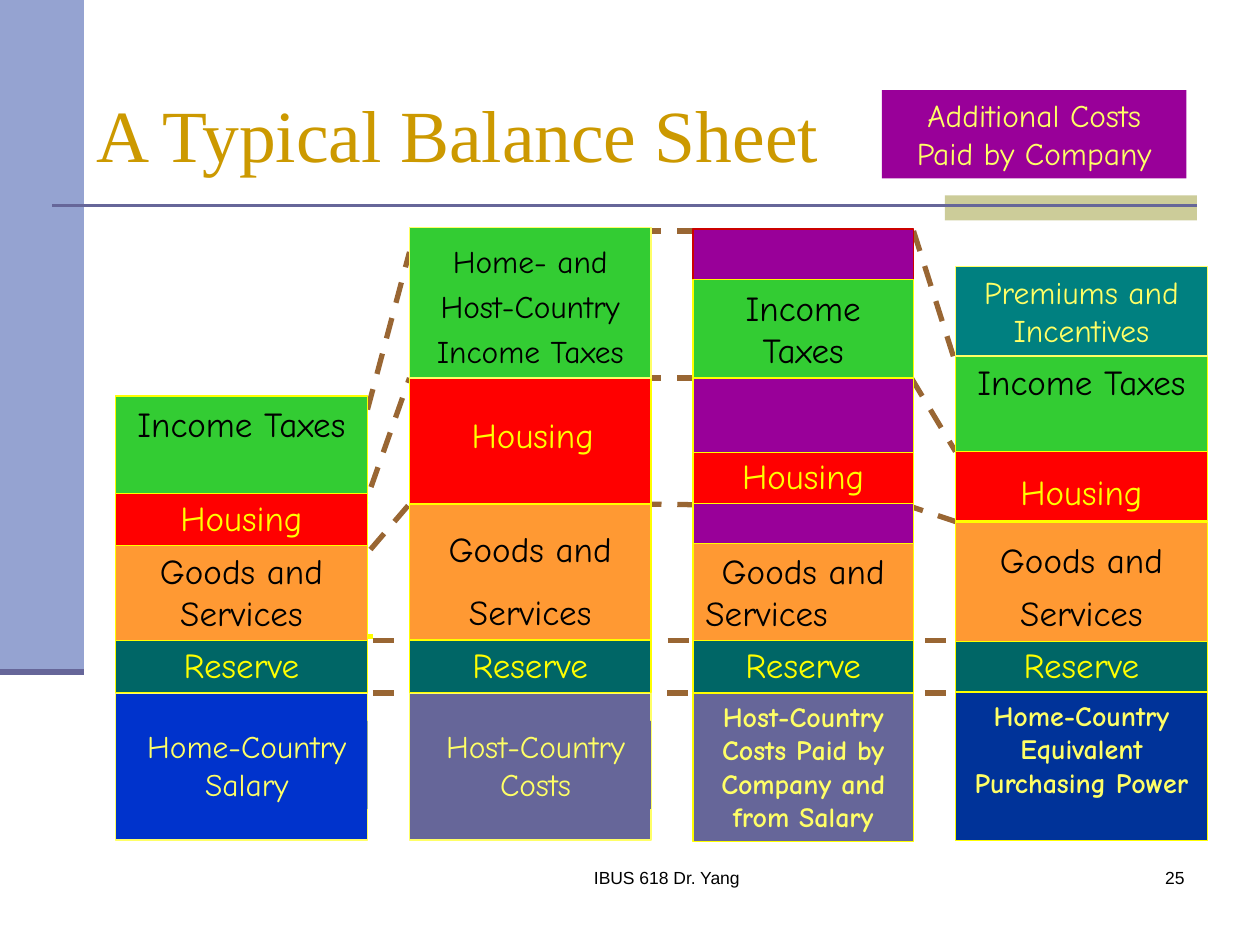
from lxml.etree import SubElement
from pptx import Presentation
from pptx.dml.color import RGBColor
from pptx.enum.dml import MSO_LINE
from pptx.enum.shapes import MSO_CONNECTOR, MSO_SHAPE
from pptx.enum.text import MSO_ANCHOR, MSO_AUTO_SIZE, PP_ALIGN
from pptx.oxml.ns import qn
from pptx.util import Inches, Pt

CELL = Inches(1) / 12  # the slide is a grid of 120 columns by 90 rows

COLORS = {
    "periwinkle": "95A3D1", "khaki": "CCCC99", "slate": "666699",
    "gold": "CC9900", "brown": "996633", "purple": "990099",
    "green": "33CC33", "red": "FF0000", "crimson": "CC0000",
    "orange": "FF9933", "pine": "006666", "teal": "008080",
    "blue": "0033CC", "navy": "003399", "yellow": "FFFF00",
    "lemon": "FFFF66", "black": "000000",
}

# kind of band: fill, outline, text colour, text size, bold
BANDS = {
    "taxes": ("green", "yellow", "black", 20, False),
    "all taxes": ("green", "lemon", "black", 18, False),
    "housing": ("red", "yellow", "yellow", 20, False),
    "housing label": ("red", None, "yellow", 20, False),
    "goods": ("orange", "yellow", "black", 20, False),
    "reserve": ("pine", "yellow", "yellow", 20, False),
    "premiums": ("teal", "lemon", "lemon", 18, False),
    "company": ("purple", "yellow", "lemon", 18, False),
    "company top": ("purple", "crimson", "lemon", 18, False),
    "legend": ("purple", None, "lemon", 18, False),
    "salary": ("blue", "lemon", "lemon", 18, False),
    "salary label": ("blue", None, "lemon", 18, False),
    "host costs": ("slate", "lemon", "lemon", 18, False),
    "host label": ("slate", None, "lemon", 18, False),
    "shared costs": ("slate", "yellow", "lemon", 16, True),
    "purchasing power": ("navy", "yellow", "lemon", 16, True),
}

CHART = (11, 22)  # left column and top row of the balance sheet
RESERVE = ("reserve", 38.7, 5.25, "Reserve")

# (left, width) and bands from back to front: kind, top, height, text, line spacing
COLUMNS = [
    ((0, 24), [
        ("salary", 44, 14),
        RESERVE,
        ("goods", 29.7, 9.3, "Goods and Services"),
        ("housing", 24.7, 5.25, "Housing"),
        ("taxes", 15.7, 9.3, "Income Taxes"),
    ]),
    ((28, 23), [
        ("host costs", 44, 14),
        RESERVE,
        ("goods", 25.65, 13.3, "Goods and Services", 1.5),
        ("housing", 13.9, 12.1),
        ("all taxes", -0.3, 14.3, "Home- and Host-Country Income Taxes", 1.2),
    ]),
    ((55, 21), [
        RESERVE,
        ("goods", 29.7, 9.3, "Goods and\nServices"),
        ("company", 24.55, 5.25),
        ("housing", 20.7, 5.25, "Housing"),
        ("company", 14, 7.1),
        ("company top", -0.2, 6.1),
        ("shared costs", 44, 14.15,
         "Host-Country Costs Paid by Company and from Salary"),
        ("taxes", 4.65, 9.3, "Income Taxes"),
    ]),
    ((80, 24), [
        RESERVE,
        ("goods", 27.7, 11.4, "Goods and Services", 1.25),
        ("housing", 21, 6.6, "Housing", 1.3),
        ("taxes", 11.7, 9.3, "Income Taxes"),
        ("premiums", 3.4, 8.5, "Premiums and Incentives"),
        ("purchasing power", 43.9, 14.15,
         "Home-Country Equivalent Purchasing Power"),
    ]),
]

# labels set apart from their bands: kind, left, top, width, height, text
LABELS = [
    ("housing label", 30.5, 16.75, 18.5, 5.2, "Housing"),
    ("host label", 29, 46.65, 22, 8.4, "Host-Country Costs"),
    ("salary label", 1, 46.65, 23, 8.4, "Home-Country Salary"),
]

# dashed links: from column, row to column, row
LINKS = [
    (0, 39, 105, 39), (24, 17, 28, 2), (50, 0, 56, 0), (76, 0, 83, 22),
    (22, 31, 28, 14), (50, 14, 58, 14), (74, 11, 80, 21), (21, 44, 80, 44),
    (50, 26, 57.5, 26.1), (75, 26, 84, 29), (22, 33, 28, 26),
]
RESERVE_LINK = (19, 38.6, 26, 38.6)


def rgb(name):
    return RGBColor.from_string(COLORS[name])


def cells(*lengths):
    return [round(length * CELL) for length in lengths]


def style_text(frame, text, color, size, font="Comic Neue", bold=False,
               align=PP_ALIGN.CENTER, spacing=None, anchor=MSO_ANCHOR.TOP):
    frame.text = text
    for name, value in {"word_wrap": True, "vertical_anchor": anchor,
                        "auto_size": MSO_AUTO_SIZE.NONE}.items():
        setattr(frame, name, value)
    for paragraph in frame.paragraphs:
        paragraph.alignment = align
        paragraph.line_spacing = spacing
        for name, value in {"name": font, "size": Pt(size), "bold": bold}.items():
            setattr(paragraph.font, name, value)
        paragraph.font.color.rgb = rgb(color)


def add_block(slide, box, fill, outline=None):
    block = slide.shapes.add_shape(MSO_SHAPE.RECTANGLE, *cells(*box))
    block.shadow.inherit = False
    block.fill.solid()
    block.fill.fore_color.rgb = rgb(fill)
    if outline:
        block.line.color.rgb = rgb(outline)
        block.line.width = Pt(0.75)
    else:
        block.line.fill.background()
    return block


def add_band(slide, box, kind, text="", spacing=None):
    fill, outline, color, size, bold = BANDS[kind]
    band = add_block(slide, box, fill, outline)
    if text:
        style_text(band.text_frame, text, color, size, bold=bold, spacing=spacing)
    return band


def add_rule(slide, ends, color, width, dash=None):
    rule = slide.shapes.add_connector(MSO_CONNECTOR.STRAIGHT, *cells(*ends))
    rule.line.color.rgb = rgb(color)
    rule.line.width = Pt(width)
    rule.line.dash_style = dash
    SubElement(rule._element.spPr, qn("a:effectLst"))


def add_backdrop(slide):
    add_block(slide, (0, 0, 8, 64), "periwinkle")
    add_block(slide, (90, 18.6, 24, 2.4), "khaki")
    add_rule(slide, (5, 19.6, 114, 19.6), "slate", 1.5)
    add_rule(slide, (0, 64, 8, 64), "slate", 3.5)


def add_header(slide):
    title = slide.shapes.title
    edges = ("left", "top", "width", "height")
    for edge, length in zip(edges, cells(8, 7, 75, 11.4)):
        setattr(title, edge, length)
    style_text(title.text_frame, "A Typical Balance Sheet", "gold", 42,
               "Times New Roman", align=PP_ALIGN.LEFT, anchor=MSO_ANCHOR.MIDDLE)
    add_band(slide, (84, 8.6, 29, 8.4), "legend", "Additional Costs Paid by Company")


def add_column(slide, left, top, width, bands):
    for kind, row, height, *label in bands:
        band = add_band(slide, (left, top + row, width, height), kind, *label)
        for line in band.text_frame.paragraphs[1:]:
            line.alignment = PP_ALIGN.LEFT


def add_balance_sheet(slide, left, top):
    for color, links in (("brown", LINKS), ("yellow", [RESERVE_LINK])):
        for x1, y1, x2, y2 in links:
            add_rule(slide, (left + x1, top + y1, left + x2, top + y2),
                     color, 3, MSO_LINE.DASH)
    for (offset, width), bands in COLUMNS:
        add_column(slide, left + offset, top, width, bands)
    for kind, x, y, width, height, text in LABELS:
        add_band(slide, (left + x, top + y, width, height), kind, text)


def add_footer(slide):
    for box, text, align in (
        ((44, 82, 39, 6), "IBUS 618 Dr. Yang", PP_ALIGN.CENTER),
        ((89, 82, 25, 6), "25", PP_ALIGN.RIGHT),
    ):
        note = slide.shapes.add_textbox(*cells(*box))
        style_text(note.text_frame, text, "black", 10, "Arial", align=align)


def main():
    deck = Presentation()
    deck.slide_width, deck.slide_height = cells(120, 90)
    slide = deck.slides.add_slide(deck.slide_layouts[5])
    add_backdrop(slide)
    add_header(slide)
    add_balance_sheet(slide, *CHART)
    add_footer(slide)
    deck.save("out.pptx")


if __name__ == "__main__":
    main()
